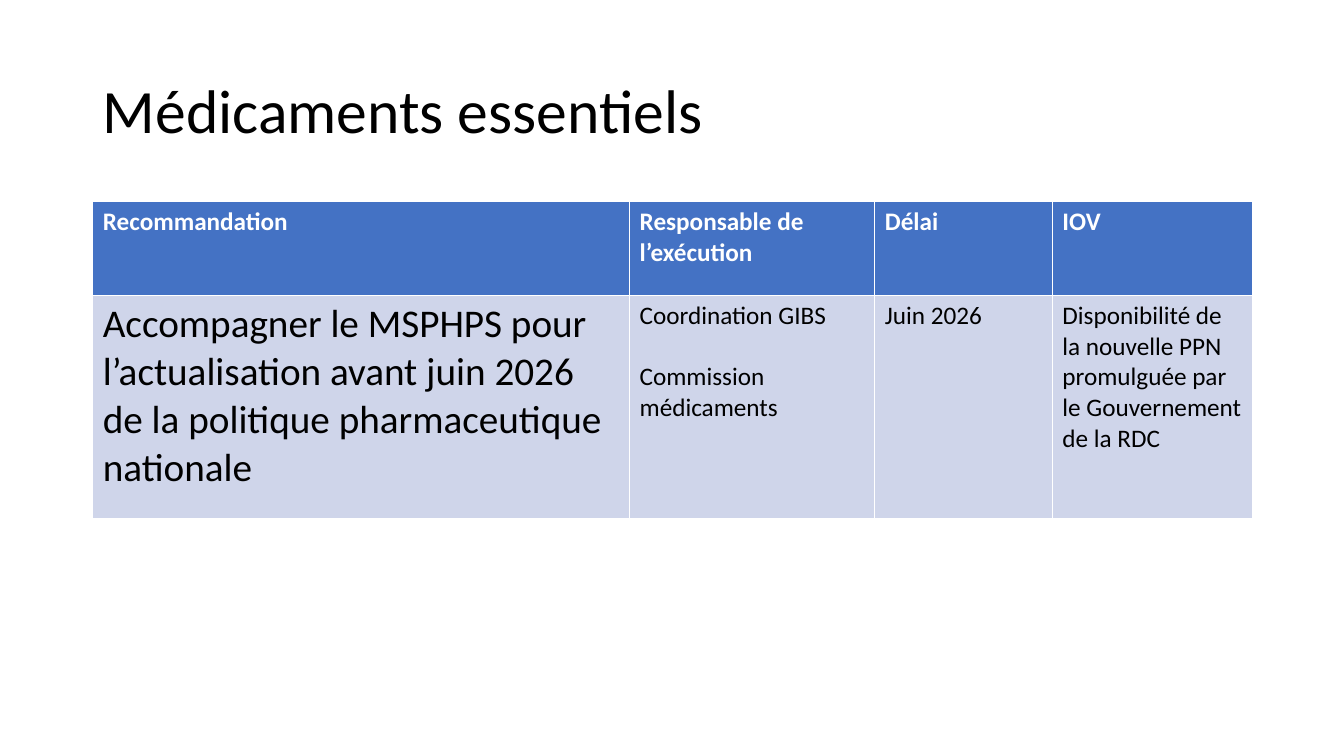
import pptx
import pptx.util
import pptx.dml.color
import pptx.enum.text

FONT = "Calibri"
COLS = [5.32, 2.43, 1.76, 1.98]
ROWS = [0.93, 2.22]
HEADER = ["Recommandation", "Responsable de l’exécution", "Délai", "IOV"]
ACTION = [
    "Accompagner le MSPHPS pour l’actualisation avant juin 2026 de la politique pharmaceutique nationale",
    "Coordination GIBS\nCommission médicaments",
    "Juin 2026",
    "Disponibilité de la nouvelle PPN promulguée par le Gouvernement de la RDC",
]


def rgb(color):
    """Return the colour for a hex string."""
    return pptx.dml.color.RGBColor.from_string(color)


def format_font(font, size, color, bold=False):
    """Apply the deck's font with a size, colour and weight."""
    font.name = FONT
    font.size = pptx.util.Pt(size)
    font.bold = bold
    font.color.rgb = rgb(color)


def add_title(s, text, left, top, width, height):
    """Place the title placeholder in its box."""
    sp = s.shapes.title
    sp.left, sp.top, sp.width, sp.height = map(pptx.util.Inches, (left, top, width, height))
    tf = sp.text_frame
    tf.text = text
    tf.auto_size = pptx.enum.text.MSO_AUTO_SIZE.NONE
    tf.vertical_anchor = pptx.enum.text.MSO_ANCHOR.MIDDLE
    p = tf.paragraphs[0]
    p.alignment = pptx.enum.text.PP_ALIGN.LEFT
    p.line_spacing = 0.9
    format_font(p.font, 44, "000000")


def fill_cell(cell, text, fill, size, color, bold):
    """Write a cell, leaving a line's gap between its paragraphs."""
    cell.fill.solid()
    cell.fill.fore_color.rgb = rgb(fill)
    cell.text = text
    for i, p in enumerate(cell.text_frame.paragraphs):
        format_font(p.font, size, color, bold)
        if i:
            p.space_before = pptx.util.Pt(22)


def add_recommendations(s, left, top, width, height):
    """Place the recommendation table in its box."""
    box = map(pptx.util.Inches, (left, top, width, height))
    table = s.shapes.add_table(len(ROWS), len(COLS), *box).table
    for column, share in zip(table.columns, COLS):
        column.width = pptx.util.Inches(width * share / sum(COLS))
    for row, share in zip(table.rows, ROWS):
        row.height = pptx.util.Inches(height * share / sum(ROWS))
    for c, (heading, entry) in enumerate(zip(HEADER, ACTION)):
        fill_cell(table.cell(0, c), heading, "4472C4", 18, "FFFFFF", True)
        fill_cell(table.cell(1, c), entry, "CFD5EA", 18 if c else 28, "000000", False)


def main():
    """Build the slide and save it."""
    prs = pptx.Presentation()
    prs.slide_width = pptx.util.Inches(13.33)
    prs.slide_height = pptx.util.Inches(7.5)
    s = prs.slides.add_slide(prs.slide_layouts[5])
    add_title(s, "Médicaments essentiels", 0.92, 0.4, 11.5, 1.45)
    add_recommendations(s, 0.92, 2, 11.5, 3.15)
    prs.save("out.pptx")


if __name__ == "__main__":
    main()
